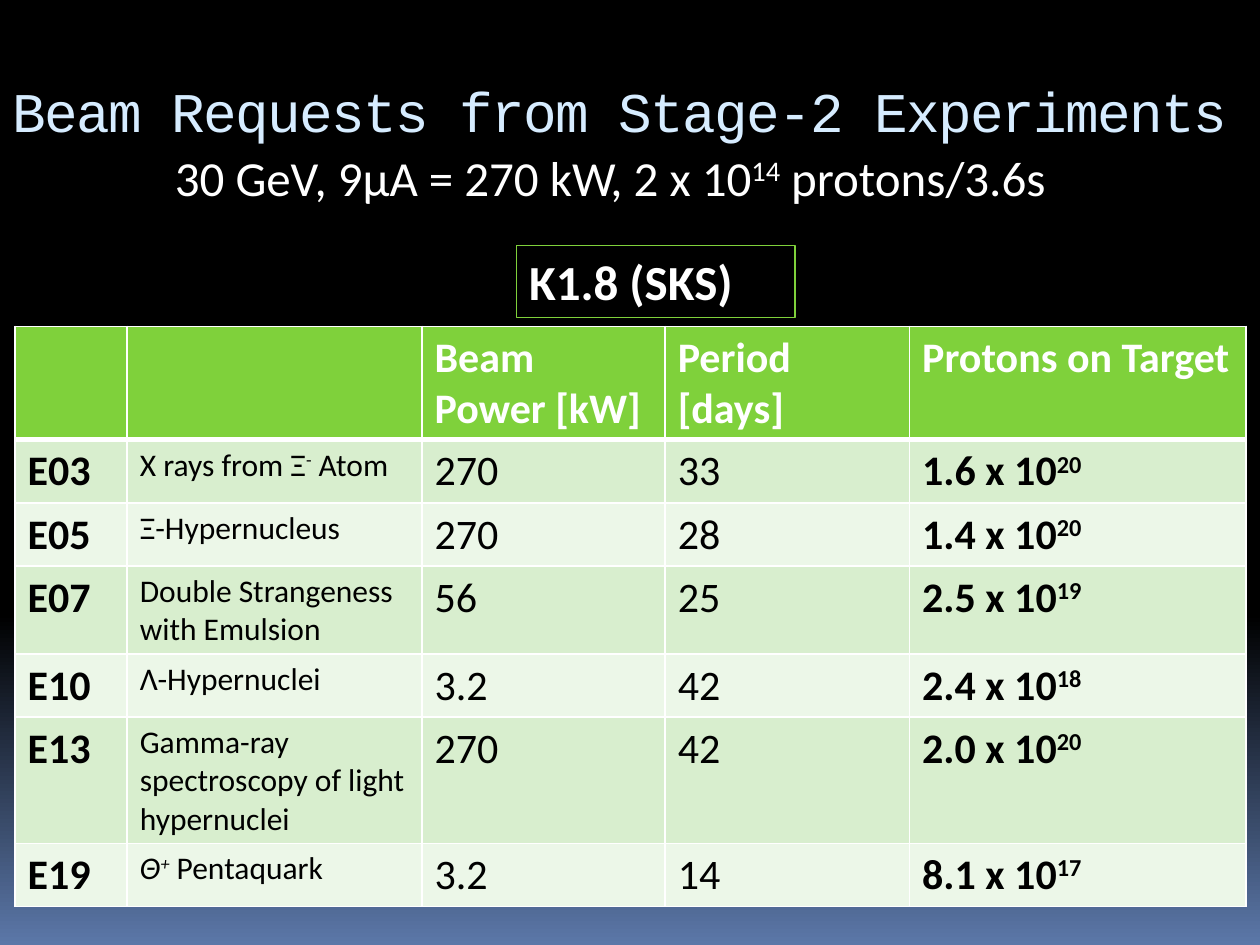
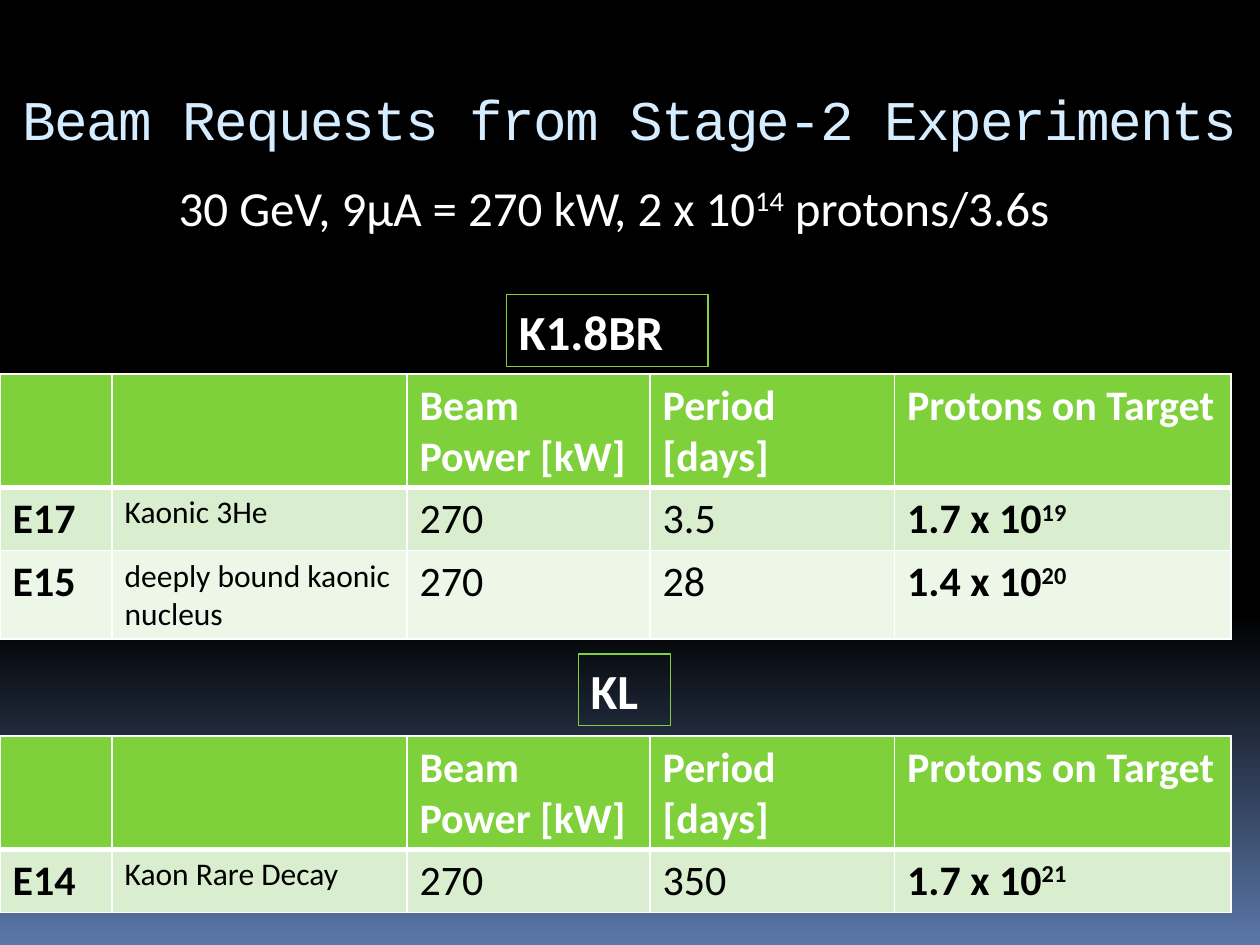
"""Build two slides of beam requests from stage-2 experiments."""
from dataclasses import dataclass

import lxml.etree
import pptx
import pptx.dml.color
import pptx.enum.text
import pptx.oxml.ns
import pptx.util

Inches = pptx.util.Inches
qn = pptx.oxml.ns.qn
ALIGN = pptx.enum.text.PP_ALIGN
ANCHOR = pptx.enum.text.MSO_ANCHOR


@dataclass(frozen=True)
class Theme:
    """Colours, fonts and sizes shared by the slides."""
    gradient: tuple = ((0, "000000"), (65, "000000"), (100, "5B77A8"))
    title: str = "D6ECFF"
    light: str = "FFFFFF"
    dark: str = "000000"
    accent: str = "7FD13B"
    bands: tuple = ("D8EECE", "ECF7E8")
    title_font: str = "Courier New"
    body_font: str = "Calibri"
    title_size: int = 32
    text_size: int = 28
    table_size: int = 24
    note_size: int = 18
    thin: float = 0.75
    rule: int = 1
    thick_rule: int = 3


THEME = Theme()
TITLE = "Beam Requests from Stage-2 Experiments"
BEAM = "30 GeV, 9μA = 270 kW, 2 x 10^14^ protons/3.6s"
HEADINGS = ("", "", "Beam Power [kW]", "Period [days]", "Protons on Target")
COLUMN_WIDTHS = (0.89, 2.34, 1.93, 1.94, 2.67)
ROW_HEIGHT = 0.41

SKS_ROWS = (
    ("E03", "X rays from Ξ^-^ Atom", "270", "33", "1.6 x 10^20^"),
    ("E05", "Ξ-Hypernucleus", "270", "28", "1.4 x 10^20^"),
    ("E07", "Double Strangeness with Emulsion", "56", "25", "2.5 x 10^19^"),
    ("E10", "Λ-Hypernuclei", "3.2", "42", "2.4 x 10^18^"),
    ("E13", "Gamma-ray spectroscopy of light hypernuclei", "270", "42", "2.0 x 10^20^"),
    ("E19", "_Θ^+^_ Pentaquark", "3.2", "14", "8.1 x 10^17^"),
)
BR_ROWS = (
    ("E17", "Kaonic 3He", "270", "3.5", "1.7 x 10^19^"),
    ("E15", "deeply bound kaonic nucleus", "270", "28", "1.4 x 10^20^"),
)
KL_ROWS = (("E14", "Kaon Rare Decay", "270", "350", "1.7 x 10^21^"),)


def rgb(code):
    """Turn a hex code into a colour."""
    return pptx.dml.color.RGBColor.from_string(code)


def write_text(frame, text, size=THEME.text_size, color=THEME.light, font=THEME.body_font,
               bold=False, align=ALIGN.LEFT, spacing=None):
    """Write one paragraph, where ^ toggles superscript and _ toggles italics."""
    para = frame.paragraphs[0]
    para.alignment = align
    italic = False
    for index, part in enumerate(text.split("^")):
        for position, piece in enumerate(part.split("_")):
            italic = italic != (position > 0)
            if not piece:
                continue
            span = para.add_run()
            span.text = piece
            span.font.size = pptx.util.Pt(size)
            span.font.name = font
            span.font.bold = bold
            span.font.italic = italic
            span.font.color.rgb = rgb(color)
            properties = span.font._element
            if index % 2:
                properties.set("baseline", "30000")
            if spacing is not None:
                properties.set("spc", str(spacing * 100))


def add_text(page, text, left, top, width, height, outline=None, anchor=ANCHOR.TOP, **style):
    """Add a text box, outlined when a line colour is given."""
    box = page.shapes.add_textbox(*map(Inches, (left, top, width, height)))
    box.text_frame.word_wrap = True
    box.text_frame.vertical_anchor = anchor
    if outline:
        box.line.color.rgb = rgb(outline)
        box.line.width = pptx.util.Pt(THEME.thin)
    write_text(box.text_frame, text, **style)


def add_label(page, text, left, top, width):
    """Add the outlined name of a beam line."""
    add_text(page, text, left, top, width, 0.57, outline=THEME.accent, bold=True)


def set_borders(cell, top, bottom):
    """Draw the four white borders of a cell."""
    properties = cell._tc.get_or_add_tcPr()
    for side, width in (("L", THEME.rule), ("R", THEME.rule), ("T", top), ("B", bottom)):
        line = lxml.etree.SubElement(properties, qn(f"a:ln{side}"), w=str(pptx.util.Pt(width)))
        fill = lxml.etree.SubElement(line, qn("a:solidFill"))
        lxml.etree.SubElement(fill, qn("a:srgbClr"), val=THEME.light)


def cell_style(row, column):
    """Choose the text format of a table cell."""
    if row == 0:
        return dict(size=THEME.table_size, bold=True)
    return dict(size=THEME.note_size if column == 1 else THEME.table_size,
                color=THEME.dark, bold=column in (0, 4))


def add_request_table(page, left, top, requests):
    """Add a banded table of beam requests."""
    rows = (HEADINGS, *requests)
    table = page.shapes.add_table(len(rows), len(HEADINGS), Inches(left), Inches(top),
                                  Inches(sum(COLUMN_WIDTHS)),
                                  Inches(ROW_HEIGHT * len(rows))).table
    for column, width in zip(table.columns, COLUMN_WIDTHS):
        column.width = Inches(width)
    for row, values in enumerate(rows):
        table.rows[row].height = Inches(ROW_HEIGHT)
        for column, value in enumerate(values):
            cell = table.cell(row, column)
            set_borders(cell, top=THEME.thick_rule if row == 1 else THEME.rule,
                        bottom=THEME.thick_rule if row == 0 else THEME.rule)
            cell.fill.solid()
            cell.fill.fore_color.rgb = rgb(THEME.bands[(row - 1) % 2] if row else THEME.accent)
            write_text(cell.text_frame, value, **cell_style(row, column))


def paint_background(page):
    """Fill the page from black at the top to blue at the bottom."""
    page.background.fill.gradient()
    gradient = page._element.find(".//" + qn("a:gradFill"))
    for child in list(gradient):
        gradient.remove(child)
    stops = lxml.etree.SubElement(gradient, qn("a:gsLst"))
    for percent, color in THEME.gradient:
        stop = lxml.etree.SubElement(stops, qn("a:gs"), pos=str(percent * 1000))
        lxml.etree.SubElement(stop, qn("a:srgbClr"), val=color)
    lxml.etree.SubElement(gradient, qn("a:lin"), ang="5400000", scaled="0")


def add_page(deck, title_top, title_height, title_align, beam_left, beam_top):
    """Add a page with its background, title and beam parameters."""
    page = deck.slides.add_slide(deck.slide_layouts[6])
    paint_background(page)
    add_text(page, TITLE, 0, title_top, 10, title_height, anchor=ANCHOR.MIDDLE,
             size=THEME.title_size, color=THEME.title, font=THEME.title_font,
             align=title_align, spacing=-1)
    add_text(page, BEAM, beam_left, beam_top, 7.24, 0.57)
    return page


def main():
    """Build and save the deck."""
    deck = pptx.Presentation()
    deck.slide_width, deck.slide_height = Inches(10), Inches(7.5)

    page = add_page(deck, 0.49, 0.77, ALIGN.LEFT, 1.29, 1.12)
    add_request_table(page, 0.12, 2.59, SKS_ROWS)
    add_label(page, "K1.8 (SKS)", 4.1, 1.95, 2.21)

    page = add_page(deck, 0.58, 0.72, ALIGN.CENTER, 1.32, 1.36)
    add_request_table(page, 0, 2.97, BR_ROWS)
    add_request_table(page, 0, 5.84, KL_ROWS)
    add_label(page, "K1.8BR", 4.02, 2.34, 1.6)
    add_label(page, "KL", 4.59, 5.19, 0.73)

    deck.save("out.pptx")


if __name__ == "__main__":
    main()
